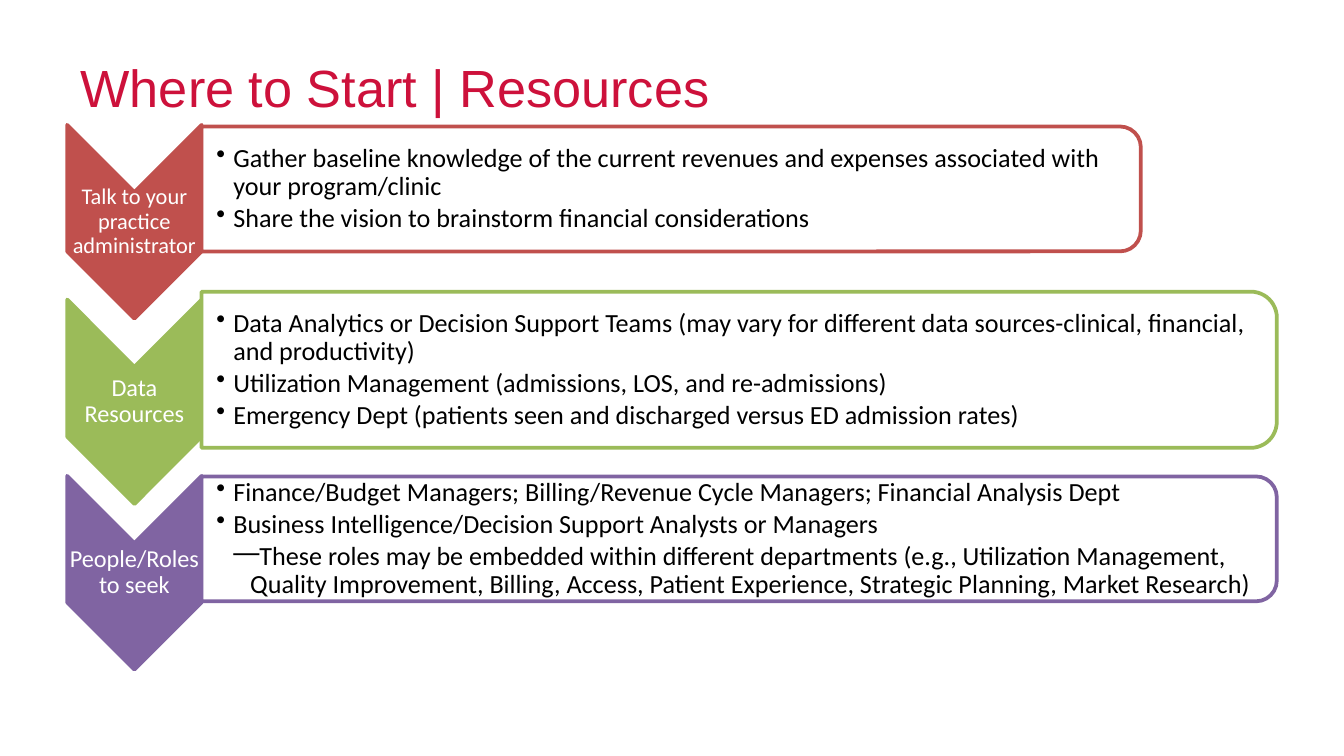
from lxml.etree import SubElement
from pptx import Presentation
from pptx.dml.color import RGBColor
from pptx.enum.shapes import MSO_SHAPE
from pptx.enum.text import MSO_ANCHOR, PP_ALIGN
from pptx.oxml.ns import qn
from pptx.util import Cm, Pt

hues = {"title": "CD113B", "red": "C0504D", "green": "9BBB59",
        "plum": "8064A2", "white": "FFFFFF", "black": "000000"}
hues = {name: RGBColor.from_string(code) for name, code in hues.items()}

rows = [
    ("red", "Talk to your practice administrator", 12, (2.36, 3.66), (2.39, 2.36, 17.75), [
        ("•", "Gather baseline knowledge of the current revenues and expenses associated with your program/clinic"),
        ("•", "Share the vision to brainstorm financial considerations")]),
    ("green", "Data Resources", 13, (5.66, 3.86), (5.51, 2.95, 20.32), [
        ("•", "Data Analytics or Decision Support Teams (may vary for different data sources-clinical, financial, and productivity)"),
        ("•", "Utilization Management (admissions, LOS, and re-admissions)"),
        ("•", "Emergency Dept (patients seen and discharged versus ED admission rates)")]),
    ("plum", "People/Roles to seek", 13, (8.99, 3.66), (9, 2.36, 20.32), [
        ("•", "Finance/Budget Managers; Billing/Revenue Cycle Managers; Financial Analysis Dept"),
        ("•", "Business Intelligence/Decision Support Analysts or Managers"),
        ("—", "These roles may be embedded within different departments (e.g., Utilization Management, Quality Improvement, Billing, Access, Patient Experience, Strategic Planning, Market Research)")]),
]
pads = {"margin_left": Cm(0.03), "margin_right": Cm(0.03), "margin_top": Cm(0.03),
        "margin_bottom": Cm(0.03), "word_wrap": True, "vertical_anchor": MSO_ANCHOR.MIDDLE}
label = {"alignment": PP_ALIGN.CENTER, "line_spacing": 0.9}
item = {"alignment": PP_ALIGN.LEFT, "line_spacing": 0.9, "space_after": Pt(2)}

deck = Presentation()
deck.slide_width, deck.slide_height = Cm(25.4), Cm(14.28)
slide = deck.slides.add_slide(deck.slide_layouts[5])


def turned(kind, left, top, wide, high, fill, line):
    shape = slide.shapes.add_shape(kind, Cm(left + (wide - high) / 2), Cm(top + (high - wide) / 2),
                                   Cm(high), Cm(wide))
    shape.rotation = 90
    shape.shadow.inherit = False
    shape.fill.solid()
    shape.fill.fore_color.rgb = hues[fill]
    shape.line.color.rgb = hues[line]
    shape.line.width = Pt(2)
    return shape


def style(para, text, form, face, size, hue):
    para.text = text
    for key, value in form.items():
        setattr(para, key, value)
    for key, value in {"name": face, "size": Pt(size)}.items():
        setattr(para.font, key, value)
    para.font.color.rgb = hues[hue]


title = slide.shapes.title
for key, value in {"left": 1.27, "top": 0.89, "width": 22.86, "height": 1.5}.items():
    setattr(title, key, Cm(value))
title.text_frame.vertical_anchor = MSO_ANCHOR.MIDDLE
style(title.text_frame.paragraphs[0], "Where to Start | Resources",
      {"alignment": PP_ALIGN.LEFT}, "Arial", 28, "title")

for hue, name, size, (top, high), (edge, tall, wide), points in rows:
    turned(MSO_SHAPE.CHEVRON, 1.27, top, 2.54, high, hue, hue)
    box = slide.shapes.add_textbox(Cm(1.27), Cm(top + 1.28), Cm(2.54), Cm(high - 2.56))
    for key, value in pads.items():
        setattr(box.text_frame, key, value)
    style(box.text_frame.paragraphs[0], name, label, "Calibri", size, "white")

    panel = turned(MSO_SHAPE.ROUND_2_SAME_RECTANGLE, 3.81, edge, wide, tall, "white", hue)
    tint = panel.fill._xPr.find(qn("a:solidFill"))[0]
    SubElement(tint, qn("a:alpha"), val="90000")
    box = slide.shapes.add_textbox(Cm(3.81), Cm(edge + 0.13), Cm(wide - 0.13), Cm(tall - 0.26))
    frame = box.text_frame
    for key, value in {**pads, "margin_left": Cm(0.28)}.items():
        setattr(frame, key, value)
    for i, (mark, text) in enumerate(points):
        para = frame.add_paragraph() if i else frame.paragraphs[0]
        depth = 2 if mark == "—" else 1
        para.level = depth
        props = para._p.get_or_add_pPr()
        props.set("marL", str(Cm(0.32 * depth)))
        props.set("indent", str(-Cm(0.32)))
        SubElement(props, qn("a:buChar"), char=mark)
        style(para, text, item, "Calibri", 14, "black")

deck.save("out.pptx")
